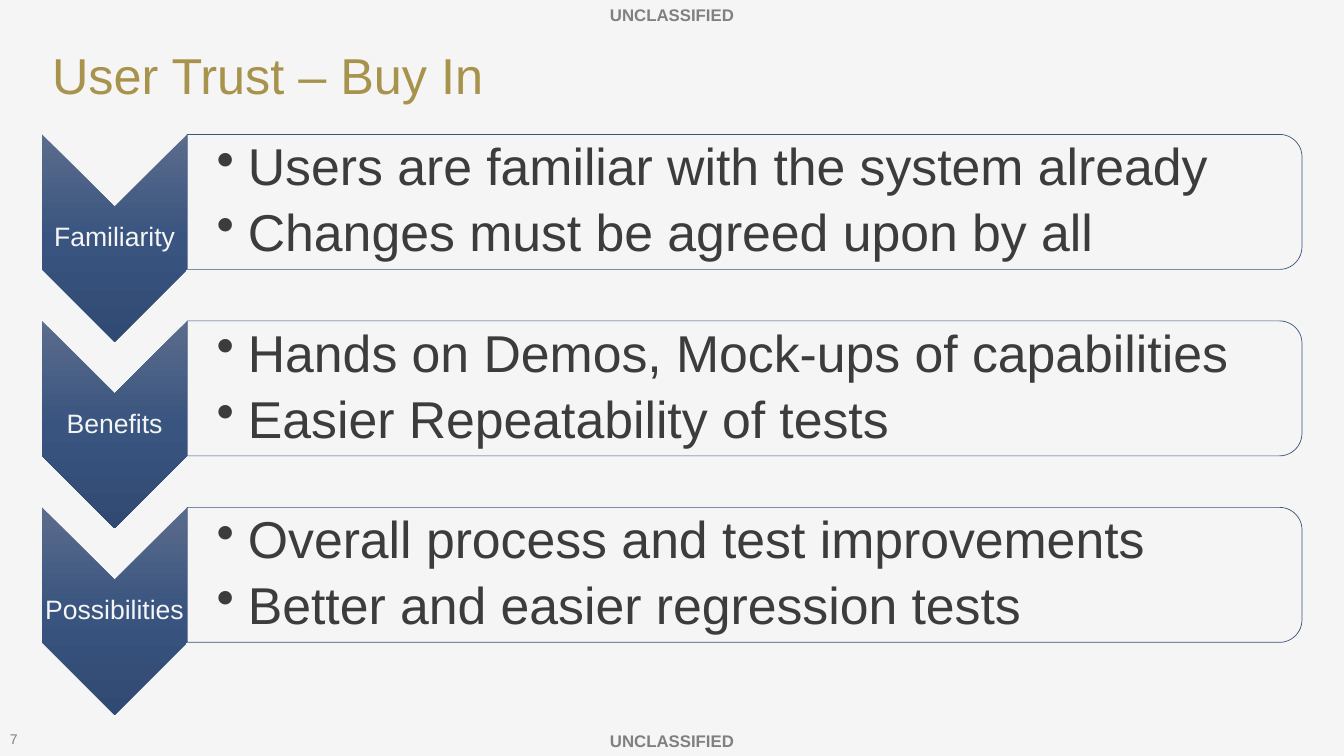
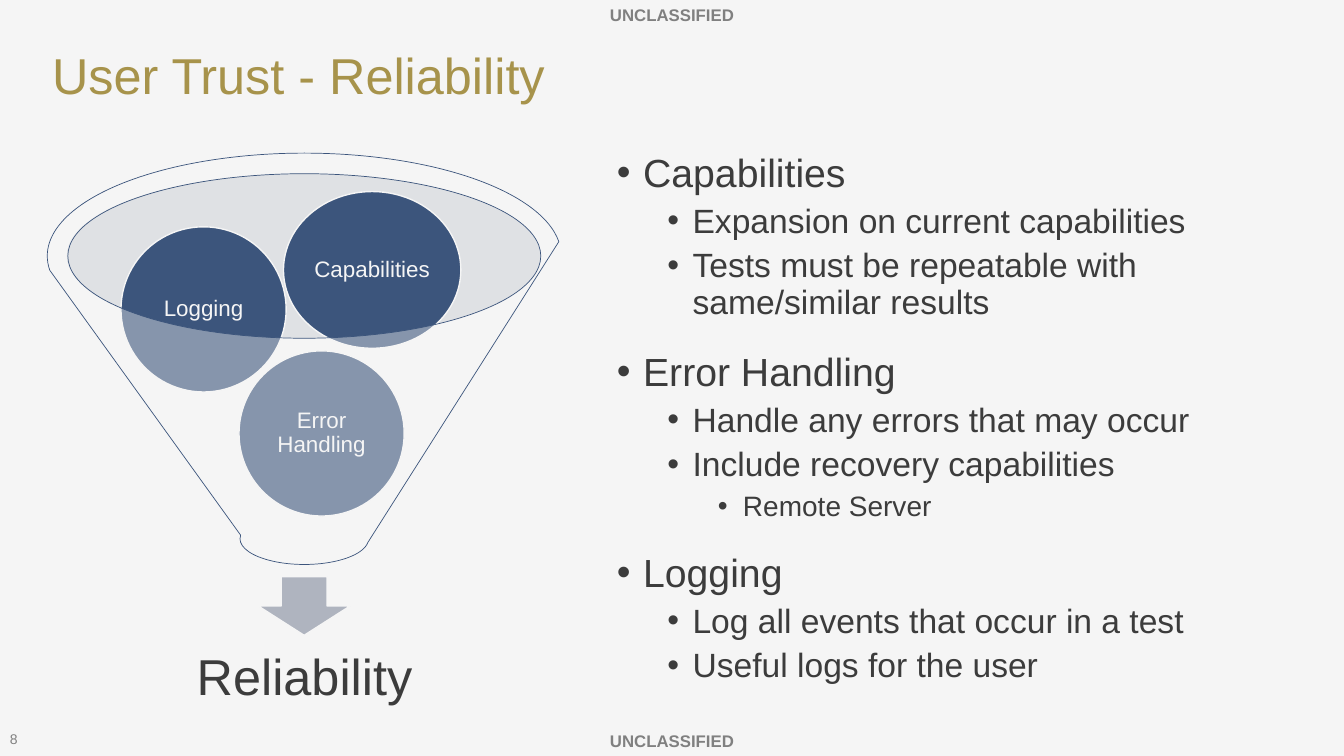
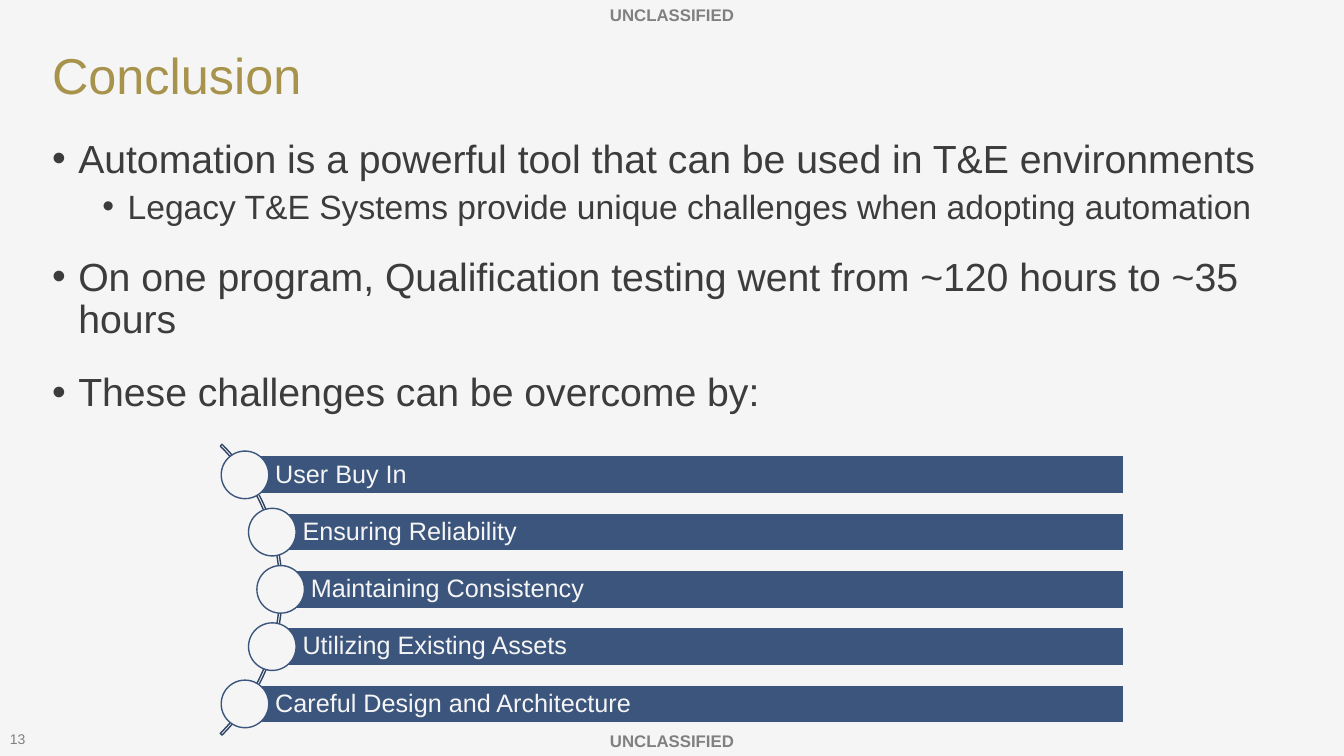
from dataclasses import dataclass

from lxml.etree import SubElement
from pptx import Presentation
from pptx.dml.color import RGBColor
from pptx.enum.shapes import MSO_SHAPE
from pptx.enum.text import MSO_ANCHOR, MSO_AUTO_SIZE, PP_ALIGN
from pptx.oxml.ns import qn
from pptx.util import Pt

PAPER = RGBColor(0xF5, 0xF5, 0xF5)
INK = RGBColor(0x3C, 0x3C, 0x3C)
GOLD = RGBColor(0xA7, 0x93, 0x4B)
NAVY = RGBColor(0x3C, 0x55, 0x7C)
ARC_NAVY = RGBColor(0x30, 0x44, 0x63)
GREY = RGBColor(0x80, 0x80, 0x80)
ARROW_GREY = RGBColor(0xAF, 0xB4, 0xBF)
RIM_GREY = RGBColor(0xC0, 0xC3, 0xCC)
CHEVRON_STOPS = (
    (0, RGBColor(0x5B, 0x6C, 0x8C)),
    (50, RGBColor(0x39, 0x54, 0x7F)),
    (100, RGBColor(0x30, 0x4A, 0x74)),
)

FONT = "Arial"
WIDTH, HEIGHT = 960, 540
TITLE_ONLY, TITLE_AND_BODY = 5, 1


@dataclass
class Box:
    x: float
    y: float
    w: float
    h: float

    def lengths(self):
        return Pt(self.x), Pt(self.y), Pt(self.w), Pt(self.h)

    def turned(self):
        """Frame that fills this box after a quarter turn."""
        shift = (self.w - self.h) / 2
        return Box(self.x + shift, self.y - shift, self.h, self.w)


@dataclass
class Para:
    text: str
    level: int = 0


@dataclass
class Level:
    size: float
    left: float
    hang: float
    before: float = 0
    after: float = 0


@dataclass
class Step:
    label: str
    points: tuple[str, str]


@dataclass
class Ball:
    label: str
    box: Box


@dataclass
class Bar:
    label: str
    x: float


BODY_LEVELS = (Level(28, 18.72, 18.72, 22), Level(24, 54, 18, 6), Level(20, 90, 18, 6))
STEP_LEVELS = (Level(37, 22.4, 22.4, after=7),)

STEPS = (
    Step("Familiarity", ("Users are familiar with the system already",
                         "Changes must be agreed upon by all")),
    Step("Benefits", ("Hands on Demos, Mock-ups of capabilities",
                      "Easier Repeatability of tests")),
    Step("Possibilities", ("Overall process and test improvements",
                           "Better and easier regression tests")),
)

BALLS = (
    Ball("Error Handling", Box(170.7, 250.6, 118, 118)),
    Ball("Logging", Box(86.4, 162, 118, 118)),
    Ball("Capabilities", Box(202.5, 136.8, 126.7, 112)),
)

RELIABILITY_POINTS = (
    Para("Capabilities"),
    Para("Expansion on current capabilities", 1),
    Para("Tests must be repeatable with same/similar results", 1),
    Para("Error Handling"),
    Para("Handle any errors that may occur", 1),
    Para("Include recovery capabilities", 1),
    Para("Remote Server", 2),
    Para("Logging"),
    Para("Log all events that occur in a test", 1),
    Para("Useful logs for the user", 1),
)

CONCLUSION_POINTS = (
    Para("Automation is a powerful tool that can be used in T&E environments"),
    Para("Legacy T&E Systems provide unique challenges when adopting automation", 1),
    Para("On one program, Qualification testing went from ~120 hours to ~35 hours"),
    Para("These challenges can be overcome by:"),
)

BARS = (
    Bar("User Buy In", 175),
    Bar("Ensuring Reliability", 194.5),
    Bar("Maintaining Consistency", 200.5),
    Bar("Utilizing Existing Assets", 194.5),
    Bar("Careful Design and Architecture", 175),
)


def write(tf, text, *, size=18, color=INK, bold=False, align=PP_ALIGN.LEFT,
          anchor=MSO_ANCHOR.TOP, insets=(7.2, 3.6, 7.2, 3.6), spacing=0.9, levels=()):
    """Fill a frame with a string, or with Paras bulleted according to levels."""
    tf.word_wrap = True
    tf.auto_size = MSO_AUTO_SIZE.NONE
    tf.vertical_anchor = anchor
    tf.margin_left, tf.margin_top, tf.margin_right, tf.margin_bottom = map(Pt, insets)
    paras = (Para(text),) if isinstance(text, str) else text
    for i, para in enumerate(paras):
        p = tf.add_paragraph() if i else tf.paragraphs[0]
        p.alignment = align
        p.line_spacing = spacing
        p.level = para.level
        p.space_before = p.space_after = Pt(0)
        if levels:
            level = levels[para.level]
            size = level.size
            p.space_before = Pt(level.before if i else 0)
            p.space_after = Pt(level.after)
            pPr = p._p.get_or_add_pPr()
            pPr.set("marL", str(Pt(level.left)))
            pPr.set("indent", str(-Pt(level.hang)))
            SubElement(pPr, qn("a:buChar")).set("char", "•")
        r = p.add_run()
        r.text = para.text
        r.font.name = FONT
        r.font.size = Pt(size)
        r.font.bold = bold
        r.font.color.rgb = color


def add_text(s, box: Box, text, **style):
    write(s.shapes.add_textbox(*box.lengths()).text_frame, text, **style)


def place(ph, box: Box):
    ph.left, ph.top, ph.width, ph.height = box.lengths()


def draw(s, kind, box: Box, fill=None, line=None, width=1.0, opacity=100, turn=False):
    sp = s.shapes.add_shape(kind, *(box.turned() if turn else box).lengths())
    sp.rotation = 90 if turn else 0
    sp.shadow.inherit = False
    if fill is None:
        sp.fill.background()
    else:
        sp.fill.solid()
        sp.fill.fore_color.rgb = fill
        if opacity < 100:
            clr = sp._element.spPr.find(qn("a:solidFill"))[0]
            SubElement(clr, qn("a:alpha")).set("val", str(opacity * 1000))
    if line is None:
        sp.line.fill.background()
    else:
        sp.line.color.rgb = line
        sp.line.width = Pt(width)
    return sp


def shade_downward(sp, stops):
    sp.fill.gradient()
    grad = sp._element.spPr.find(qn("a:gradFill"))
    grad.set("rotWithShape", "0")
    grad.find(qn("a:lin")).set("ang", "5400000")
    gs_list = grad.find(qn("a:gsLst"))
    for gs in list(gs_list):
        gs_list.remove(gs)
    for percent, color in stops:
        gs = SubElement(gs_list, qn("a:gs"))
        gs.set("pos", str(percent * 1000))
        SubElement(gs, qn("a:srgbClr")).set("val", str(color))


def new_slide(prs, layout: int, title: str, number: int):
    s = prs.slides.add_slide(prs.slide_layouts[layout])
    place(s.shapes.title, Box(30, 16, 900, 80))
    write(s.shapes.title.text_frame, title, size=36, color=GOLD, anchor=MSO_ANCHOR.MIDDLE)
    for y in (0, 518.4):
        add_text(s, Box(0, y, WIDTH, 21.6), "UNCLASSIFIED", size=12, color=GREY,
                 bold=True, align=PP_ALIGN.CENTER, spacing=1)
    add_text(s, Box(0, 518.4, 43.2, 19), str(number), size=10, color=GREY, spacing=1)
    return s


def fill_body(s, box: Box, points):
    body = s.placeholders[1]
    place(body, box)
    write(body.text_frame, points, levels=BODY_LEVELS, insets=(7.2, 3.6, 7.2, 50))


def buy_in_slide(prs):
    s = new_slide(prs, TITLE_ONLY, "User Trust – Buy In", 7)
    left, split, pitch = 30, 133.7, 133.2
    for i, step in enumerate(STEPS):
        y = 96 + i * pitch
        chevron = draw(s, MSO_SHAPE.CHEVRON, Box(left, y, split - left, 148.2), turn=True)
        shade_downward(chevron, CHEVRON_STOPS)
        add_text(s, Box(left, y + 51.8, split - left, 44.6), step.label, size=19,
                 color=PAPER, align=PP_ALIGN.CENTER, anchor=MSO_ANCHOR.MIDDLE,
                 insets=(0.8, 0.8, 0.8, 0.8))
        draw(s, MSO_SHAPE.ROUND_2_SAME_RECTANGLE, Box(split, y, 796.3, 96.4),
             PAPER, NAVY, 0.5, opacity=90, turn=True)
        add_text(s, Box(split, y + 4.7, 791.5, 87), [Para(t) for t in step.points],
                 levels=STEP_LEVELS, anchor=MSO_ANCHOR.MIDDLE, insets=(21, 2, 2, 2))


def reliability_slide(prs):
    s = new_slide(prs, TITLE_AND_BODY, "User Trust - Reliability", 8)
    fill_body(s, Box(433.5, 106, 496.5, 414.7), RELIABILITY_POINTS)
    draw(s, MSO_SHAPE.OVAL, Box(47.8, 124, 338.4, 117.4), RIM_GREY, opacity=40)
    draw(s, MSO_SHAPE.DOWN_ARROW, Box(184.5, 412, 65.5, 41.8), ARROW_GREY, PAPER)
    add_text(s, Box(59.8, 445.7, 315.4, 78.5), "Reliability", size=36,
             align=PP_ALIGN.CENTER, anchor=MSO_ANCHOR.MIDDLE, insets=(20, 20, 20, 20))
    for ball in BALLS:
        sp = draw(s, MSO_SHAPE.OVAL, ball.box, NAVY, PAPER)
        write(sp.text_frame, ball.label, size=16, color=PAPER, align=PP_ALIGN.CENTER,
              anchor=MSO_ANCHOR.MIDDLE, insets=(1.4, 1.4, 1.4, 1.4))
    draw(s, MSO_SHAPE.FUNNEL, Box(33.8, 109.4, 367.2, 293.8), PAPER, NAVY, 0.5, opacity=40)


def conclusion_slide(prs):
    s = new_slide(prs, TITLE_AND_BODY, "Conclusion", 13)
    fill_body(s, Box(30, 96, 900, 414.7), CONCLUSION_POINTS)
    arc = draw(s, MSO_SHAPE.BLOCK_ARC, Box(-92.2, 274.3, 293.8, 293.8), line=ARC_NAVY)
    arc.adjustments[0] = 189
    arc.adjustments[1] = 27
    arc.adjustments[2] = 0.6 / 100
    right, height, dot, pitch = 803, 27.2, 34, 40.9
    for i, bar in enumerate(BARS):
        y = 325.6 + i * pitch
        sp = draw(s, MSO_SHAPE.RECTANGLE, Box(bar.x, y, right - bar.x, height), NAVY, PAPER)
        write(sp.text_frame, bar.label, size=18, color=PAPER, anchor=MSO_ANCHOR.MIDDLE,
              insets=(21.6, 3.6, 3.6, 3.6))
        draw(s, MSO_SHAPE.OVAL, Box(bar.x - dot / 2, y + (height - dot) / 2, dot, dot),
             PAPER, NAVY)


def main():
    prs = Presentation()
    prs.slide_width, prs.slide_height = Pt(WIDTH), Pt(HEIGHT)
    background = prs.slide_master.background.fill
    background.solid()
    background.fore_color.rgb = PAPER
    buy_in_slide(prs)
    reliability_slide(prs)
    conclusion_slide(prs)
    prs.save("out.pptx")


if __name__ == "__main__":
    main()
